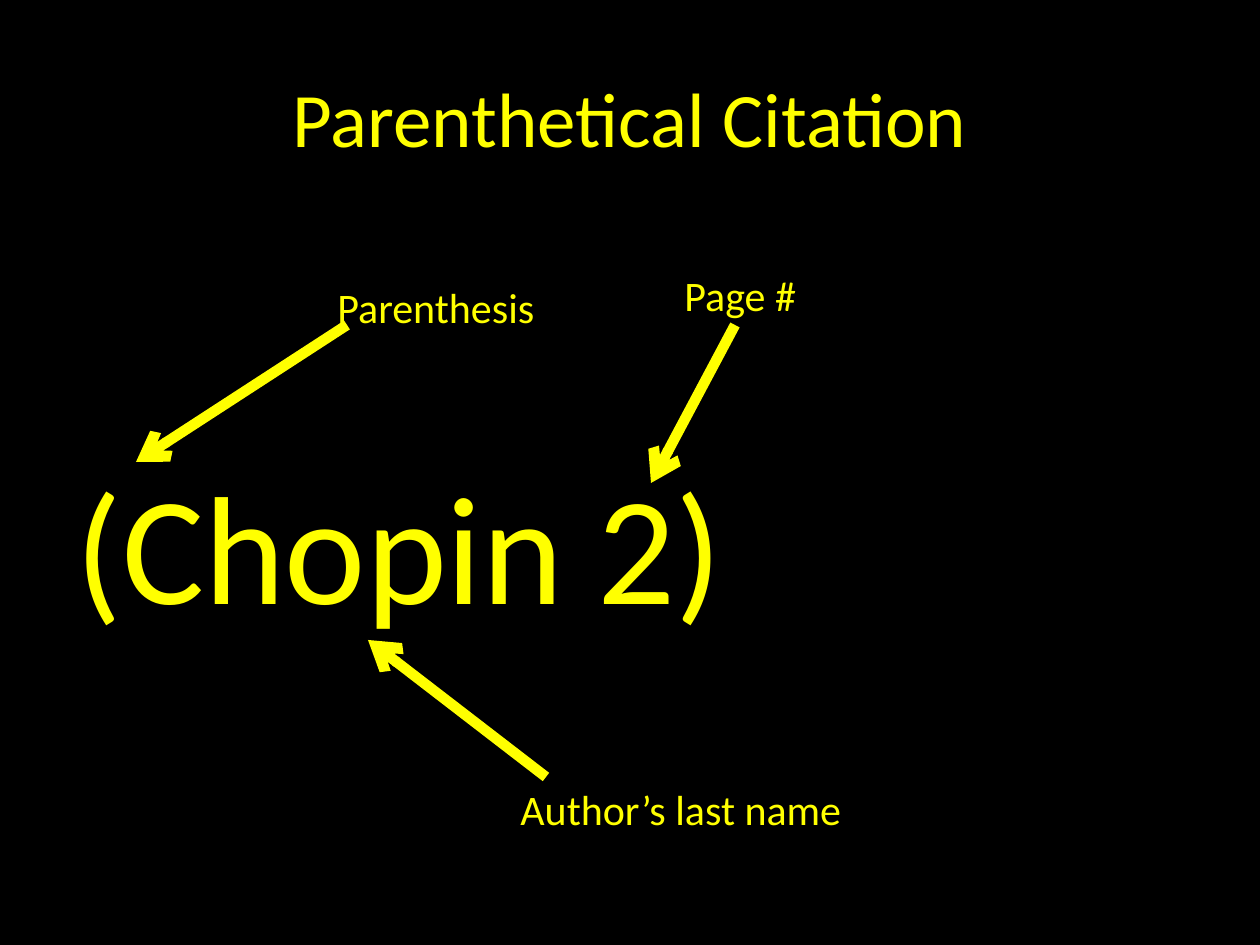
from lxml import etree
from pptx import Presentation
from pptx.dml.color import RGBColor
from pptx.enum.shapes import MSO_CONNECTOR
from pptx.enum.text import MSO_ANCHOR, PP_ALIGN
from pptx.oxml.ns import qn
from pptx.util import Pt

STRAIGHT = MSO_CONNECTOR.STRAIGHT
LEFT, CENTER = PP_ALIGN.LEFT, PP_ALIGN.CENTER
TOP, MIDDLE = MSO_ANCHOR.TOP, MSO_ANCHOR.MIDDLE
SCALE = 914400 / 126
COLORS = {"back": "000000", "ink": "FFFF00"}
INK = RGBColor.from_string(COLORS["ink"])


def emu(*sizes):
    return [round(size * SCALE) for size in sizes]


def add_text(slide, text, box, size, align=LEFT, anchor=TOP, wrap=True):
    frame = slide.shapes.add_textbox(*emu(*box)).text_frame
    frame.word_wrap = wrap
    frame.vertical_anchor = anchor
    frame.text = text
    line = frame.paragraphs[0]
    line.alignment = align
    font = line.runs[0].font
    font.name = "Calibri"
    font.size = Pt(size)
    font.color.rgb = INK


# Slide
deck = Presentation()
deck.slide_width, deck.slide_height = emu(1260, 945)
slide = deck.slides.add_slide(deck.slide_layouts[6])
fill = slide.background.fill
fill.solid()
fill.fore_color.rgb = RGBColor.from_string(COLORS["back"])

# Title and sample citation
add_text(slide, "Parenthetical Citation", (63, 38, 1134, 157), 44, CENTER, MIDDLE)
add_text(slide, "(Chopin 2)", (63, 444, 1134, 400), 88)

# Arrows from each label to its part of the citation
arrows = [
    (347, 325, 136, 462),
    (546, 777, 368, 640),
    (735, 325, 651, 483),
]
for ends in arrows:
    arrow = slide.shapes.add_connector(STRAIGHT, *emu(*ends))
    arrow.line.color.rgb = INK
    arrow.line.width = Pt(6)
    etree.SubElement(arrow.line._get_or_add_ln(), qn("a:tailEnd"), type="arrow")
    etree.SubElement(arrow._element.spPr, qn("a:effectLst"))

# Labels
labels = [
    ("Parenthesis", (325, 275, 224, 63)),
    ("Page #", (672, 263, 139, 63)),
    ("Author’s last name", (508, 777, 349, 63)),
]
for text, box in labels:
    add_text(slide, text, box, 24, wrap=False)

deck.save("out.pptx")
